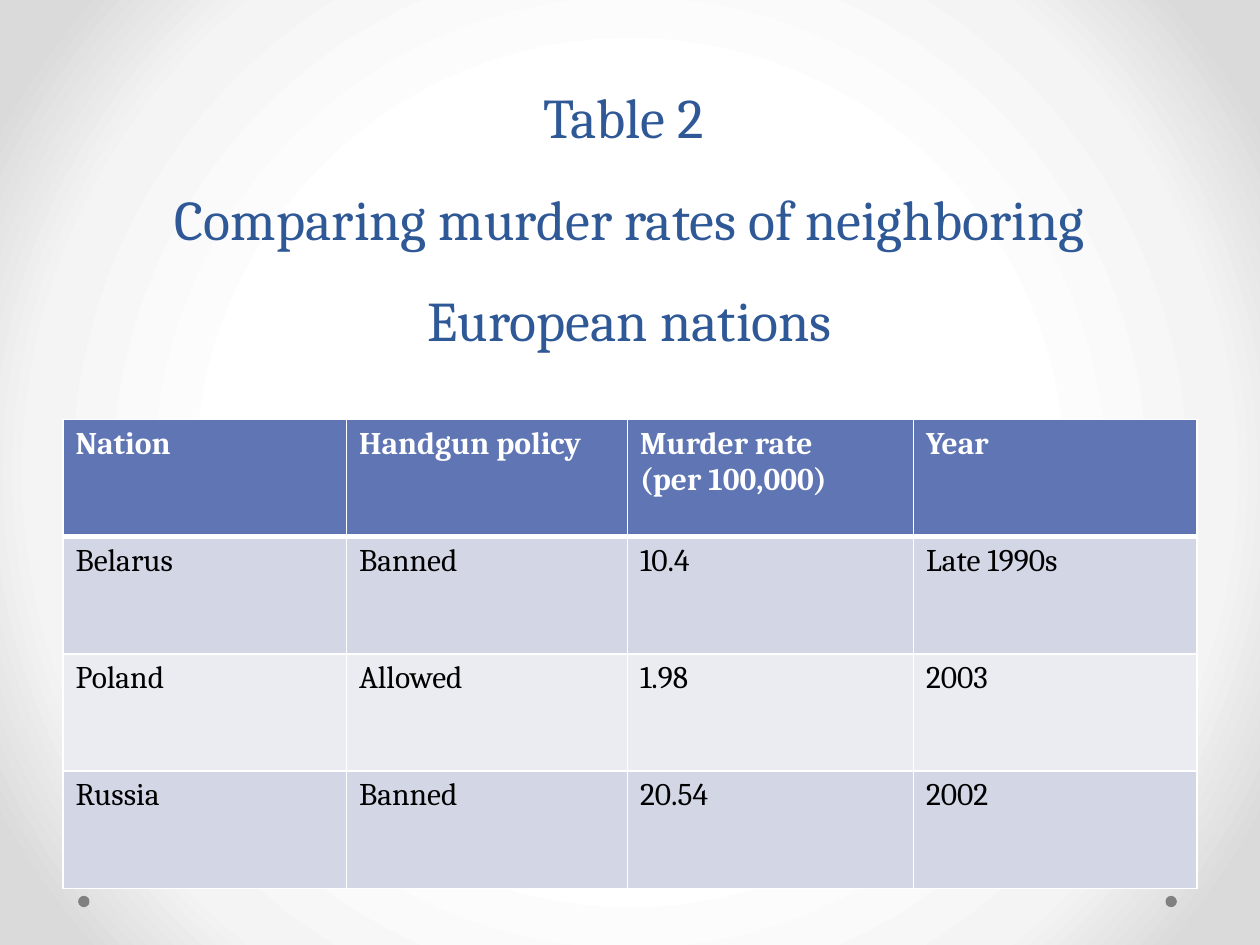
from dataclasses import dataclass

from pptx import Presentation
from pptx import util as u
from pptx.dml.color import RGBColor
from pptx.enum import shapes, text
from pptx.oxml import parse_xml
from pptx.oxml.ns import nsdecls, qn
from pptx.slide import Slide
from pptx.table import _Cell as Cell

FONT = "Cambria"
COLORS = {
    "title": "2F5897",
    "header": "6076B4",
    "band_dark": "D2D6E5",
    "band_light": "EAECF2",
    "white": "FFFFFF",
    "black": "000000",
    "dot": "808080",
}
BACKGROUND_STOPS = {50: "FFFFFF", 76: "F4F4F4", 92: "DADADA"}
COLUMN_WIDTHS = (2.25, 2.23, 2.27, 2.25)
ROW_HEIGHT = 0.93
DOT_SIZE = 0.09
DOT_LEFTS = (9.25, 0.62)


@dataclass
class TableRow:
    values: tuple[str, ...]
    fill: str
    font_color: str = "black"
    bold: bool = False
    bottom_border: int = 1


ROWS = (
    TableRow(("Nation", "Handgun policy", "Murder rate\n(per 100,000)", "Year"),
             "header", "white", True, 3),
    TableRow(("Belarus", "Banned", "10.4", "Late 1990s"), "band_dark"),
    TableRow(("Poland", "Allowed", "1.98", "2003"), "band_light"),
    TableRow(("Russia", "Banned", "20.54", "2002"), "band_dark"),
)


def color(name: str) -> RGBColor:
    return RGBColor.from_string(COLORS[name])


def set_background(slide: Slide) -> None:
    """Fill the background with a circular gradient from the centre."""
    slide.background.fill.gradient()
    linear = slide.element.find(f".//{qn('a:gradFill')}")
    stops = "".join(
        f'<a:gs pos="{position * 1000}"><a:srgbClr val="{value}"/></a:gs>'
        for position, value in BACKGROUND_STOPS.items())
    circular = parse_xml(
        f'<a:gradFill {nsdecls("a")} rotWithShape="1"><a:gsLst>{stops}</a:gsLst>'
        '<a:path path="circle"><a:fillToRect l="50000" t="50000" r="50000" b="50000"/>'
        '</a:path></a:gradFill>')
    linear.getparent().replace(linear, circular)


def add_dot(slide: Slide, left: float) -> None:
    dot = slide.shapes.add_shape(
        shapes.MSO_SHAPE.OVAL, u.Inches(left), u.Inches(7.11),
        u.Inches(DOT_SIZE), u.Inches(DOT_SIZE))
    dot.shadow.inherit = False
    dot.fill.solid()
    dot.fill.fore_color.rgb = color("dot")
    dot.line.fill.background()


def add_title(slide: Slide) -> None:
    box = slide.shapes.add_textbox(u.Inches(0.5), 0, u.Inches(9), u.Inches(2.85))
    frame = box.text_frame
    frame.word_wrap = True
    frame.vertical_anchor = text.MSO_ANCHOR.BOTTOM
    paragraph = frame.paragraphs[0]
    paragraph.text = "Table 2 \vComparing murder rates of neighboring European nations"
    paragraph.alignment = text.PP_ALIGN.CENTER
    paragraph.line_spacing = u.Pt(58)
    paragraph.font.name = FONT
    paragraph.font.size = u.Pt(32)
    paragraph.font.color.rgb = color("title")


def set_borders(cell: Cell, bottom: int, top: int) -> None:
    """Draw white borders, given in points; the sides are 1 point."""
    properties = cell._tc.get_or_add_tcPr()
    widths = {"lnL": 1, "lnR": 1, "lnT": top, "lnB": bottom}
    for index, (tag, width) in enumerate(widths.items()):
        properties.insert(index, parse_xml(
            f'<a:{tag} {nsdecls("a")} w="{u.Pt(width)}"><a:solidFill>'
            f'<a:srgbClr val="{COLORS["white"]}"/></a:solidFill></a:{tag}>'))


def fill_cell(cell: Cell, value: str, row: TableRow, top_border: int) -> None:
    cell.fill.solid()
    cell.fill.fore_color.rgb = color(row.fill)
    set_borders(cell, row.bottom_border, top_border)
    cell.text = value
    for paragraph in cell.text_frame.paragraphs:
        paragraph.font.name = FONT
        paragraph.font.size = u.Pt(18)
        paragraph.font.bold = row.bold
        paragraph.font.color.rgb = color(row.font_color)


def add_rates_table(slide: Slide) -> None:
    table = slide.shapes.add_table(
        len(ROWS), len(COLUMN_WIDTHS), u.Inches(0.5), u.Inches(3.33),
        u.Inches(sum(COLUMN_WIDTHS)), u.Inches(ROW_HEIGHT * len(ROWS))).table
    for column, width in zip(table.columns, COLUMN_WIDTHS):
        column.width = u.Inches(width)
    top_border = 1
    for table_row, row in zip(table.rows, ROWS):
        table_row.height = u.Inches(ROW_HEIGHT)
        for cell, value in zip(table_row.cells, row.values):
            fill_cell(cell, value, row, top_border)
        top_border = row.bottom_border


def main() -> None:
    presentation = Presentation()
    presentation.slide_width = u.Inches(10)
    presentation.slide_height = u.Inches(7.5)
    slide = presentation.slides.add_slide(presentation.slide_layouts[6])

    # Background and corner dots
    set_background(slide)
    for left in DOT_LEFTS:
        add_dot(slide, left)

    # Title and table
    add_title(slide)
    add_rates_table(slide)

    presentation.save("out.pptx")


if __name__ == "__main__":
    main()
